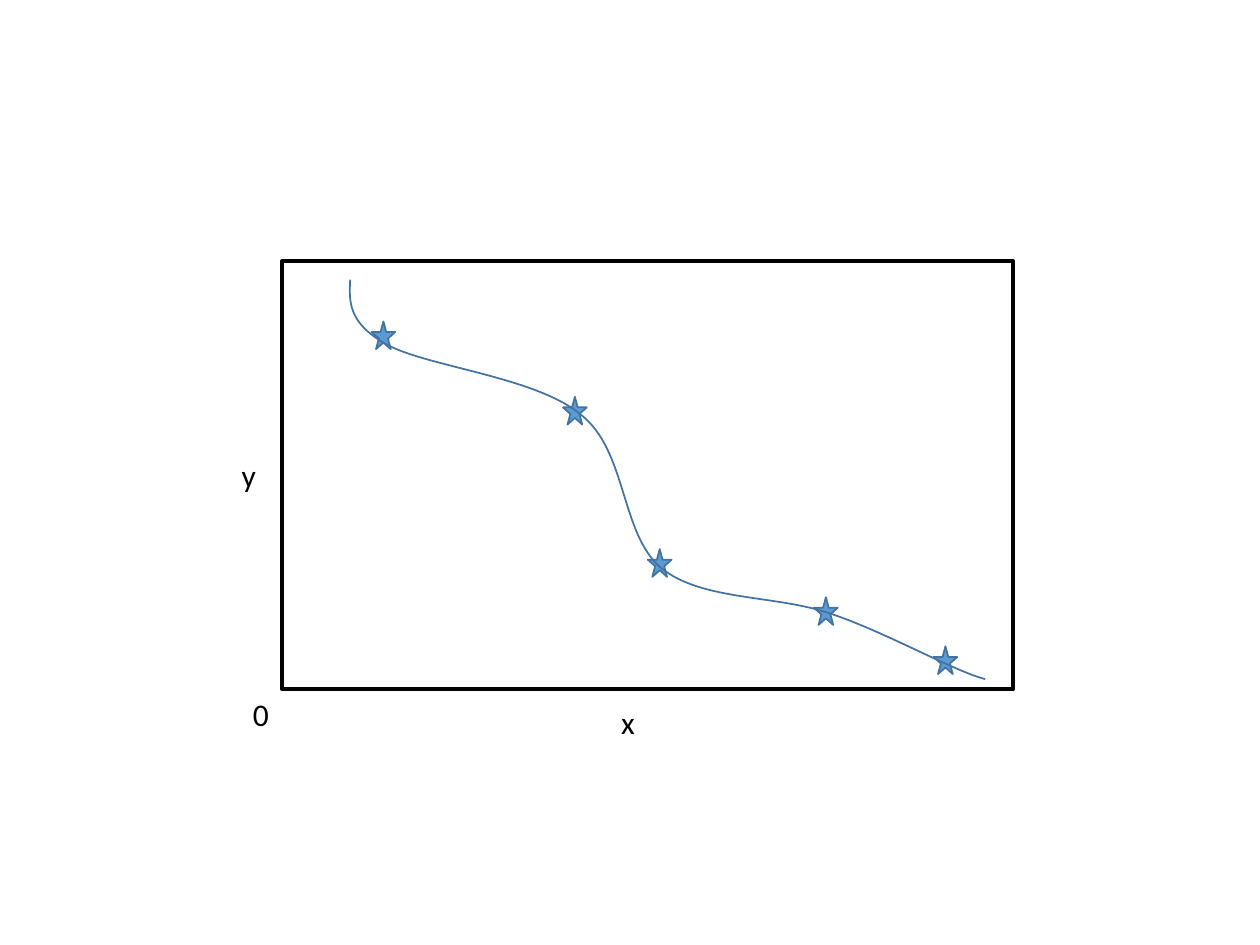
from lxml.etree import SubElement
from pptx import Presentation
from pptx.dml.color import RGBColor
from pptx.enum.shapes import MSO_SHAPE as Kind
from pptx.enum.text import MSO_AUTO_SIZE as Fit
from pptx.oxml.ns import qn
from pptx.util import Cm, Pt


def color(code):
    return RGBColor.from_string(code)


class Plot:
    font = "Calibri"
    size = 18
    ink = "000000"
    paper = "FFFFFF"
    blue = "5B9BD5"
    edge = "43739E"

    def __init__(self, slide):
        self.shapes = slide.shapes

    def style(self, shape, fill, line, width):
        shape.shadow.inherit = False
        if fill:
            shape.fill.solid()
            shape.fill.fore_color.rgb = color(fill)
        else:
            shape.fill.background()
        shape.line.color.rgb = color(line)
        shape.line.width = Pt(width)

    def frame(self, x, y, w, h):
        box = self.shapes.add_shape(Kind.RECTANGLE, Cm(x), Cm(y), Cm(w), Cm(h))
        self.style(box, self.paper, self.ink, 2.25)

    def star(self, x, y):
        mark = self.shapes.add_shape(
            Kind.STAR_5_POINT, Cm(x), Cm(y), Cm(0.48), Cm(0.56))
        self.style(mark, self.blue, self.edge, 1)

    def curve(self, points):
        first, *rest = [(Cm(x), Cm(y)) for x, y in points]
        pen = self.shapes.build_freeform(*first)
        pen.add_line_segments(rest, close=False)
        shape = pen.convert_to_shape()
        self.style(shape, None, self.edge, 1)
        track = next(shape.element.iter(qn("a:path")))
        lines = track.findall(qn("a:lnTo"))
        for start in range(0, len(lines), 3):
            bend = SubElement(track, qn("a:cubicBezTo"))
            for line in lines[start:start + 3]:
                bend.append(line[0])
                track.remove(line)

    def label(self, text, x, y, w):
        box = self.shapes.add_textbox(Cm(x), Cm(y), Cm(w), Cm(1.02))
        frame = box.text_frame
        frame.text = text
        frame.word_wrap = False
        frame.auto_size = Fit.SHAPE_TO_FIT_TEXT
        font = frame.paragraphs[0].runs[0].font
        font.name = self.font
        font.size = Pt(self.size)
        font.color.rgb = color(self.ink)


def main():
    deck = Presentation()
    deck.slide_width, deck.slide_height = Cm(25.4), Cm(19.05)
    plot = Plot(deck.slides.add_slide(deck.slide_layouts[6]))

    plot.frame(5.69, 5.26, 14.73, 8.64)
    for x, y in [(7.49, 6.48), (11.35, 8), (13.06, 11.07),
                 (16.41, 12.04), (18.82, 13.03)]:
        plot.star(x, y)
    plot.curve([
        (7.06, 5.64),
        (7.04, 6.07), (7.01, 6.5), (7.77, 6.93),
        (8.56, 7.39), (10.8, 7.59), (11.71, 8.36),
        (12.65, 9.09), (12.5, 10.77), (13.34, 11.46),
        (14.17, 12.12), (15.65, 11.99), (16.74, 12.37),
        (17.83, 12.73), (19.25, 13.54), (19.86, 13.69),
    ])
    plot.label("0", 4.85, 13.89, 0.84)
    plot.label("y", 4.62, 9.07, 0.81)
    plot.label("x", 12.27, 14.05, 0.79)

    deck.save("out.pptx")


if __name__ == "__main__":
    main()
